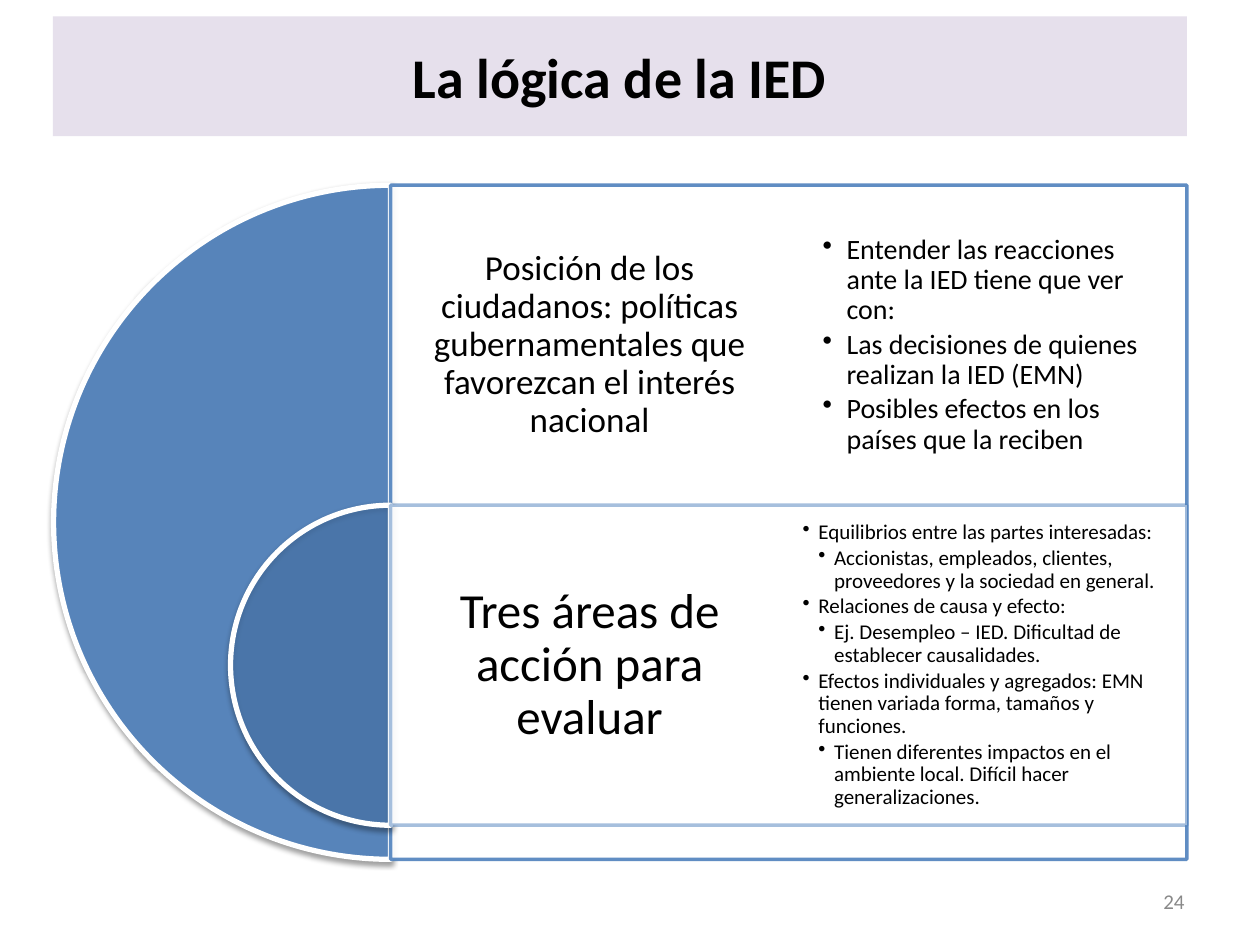
from lxml import etree
from pptx import Presentation
from pptx.dml.color import RGBColor
from pptx.enum.shapes import MSO_SHAPE
from pptx.enum.text import MSO_ANCHOR, PP_ALIGN
from pptx.oxml.ns import qn
from pptx.util import Inches, Pt

PIE, RECT = MSO_SHAPE.PIE, MSO_SHAPE.RECTANGLE
MIDDLE = MSO_ANCHOR.MIDDLE
LEFT, CENTER, RIGHT = PP_ALIGN.LEFT, PP_ALIGN.CENTER, PP_ALIGN.RIGHT

BLUE = RGBColor(0x4F, 0x81, 0xBD)
WHITE = RGBColor(0xFF, 0xFF, 0xFF)
BLACK = RGBColor(0, 0, 0)
GRAY = RGBColor(0x89, 0x89, 0x89)
LILAC = RGBColor(0xE6, 0xE0, 0xEC)

EDGE = 3.1       # left side of both panels, and centre of both pies
WIDTH = 6.32
HALF = WIDTH / 2
TOP = 1.47
BIG, SMALL = 5.35, 2.54
LOW = TOP + SMALL

CAUSES = [
    (0, "Entender las reacciones ante la IED tiene que ver con:"),
    (0, "Las decisiones de quienes realizan la IED (EMN)"),
    (0, "Posibles efectos en los países que la reciben"),
]
AREAS = [
    (0, "Equilibrios entre las partes interesadas:"),
    (1, "Accionistas, empleados, clientes, proveedores y la sociedad en general."),
    (0, "Relaciones de causa y efecto:"),
    (1, "Ej. Desempleo – IED. Dificultad de establecer causalidades."),
    (0, "Efectos individuales y agregados: EMN tienen variada forma, tamaños y funciones."),
    (1, "Tienen diferentes impactos en el ambiente local. Difícil hacer generalizaciones."),
]


def set_alpha(fill_owner, percent):
    """Make the solid fill found directly in an XML element translucent."""
    color = fill_owner.find(qn("a:solidFill"))[0]
    etree.SubElement(color, qn("a:alpha"), val=str(percent * 1000))


def add_shadow(shape):
    effects = shape._element.spPr.find(qn("a:effectLst"))
    outer = etree.SubElement(effects, qn("a:outerShdw"), blurRad="40000",
                             dist="20000", dir="5400000", rotWithShape="0")
    color = etree.SubElement(outer, qn("a:srgbClr"), val=str(BLACK))
    etree.SubElement(color, qn("a:alpha"), val="38000")


def add_solid(slide, kind, box, fill, line=None, weight=0):
    shape = slide.shapes.add_shape(kind, *map(Inches, box))
    shape.shadow.inherit = False
    shape.fill.solid()
    shape.fill.fore_color.rgb = fill
    if line is None:
        shape.line.fill.background()
    else:
        shape.line.color.rgb = line
        shape.line.width = Pt(weight)
    return shape


def add_pie(slide, top, size, alpha):
    """Draw the left half of a disc centred on the panels' edge."""
    pie = add_solid(slide, PIE, (EDGE - size / 2, top, size, size), BLUE, WHITE, 3)
    pie.adjustments[0] = 54
    pie.adjustments[1] = 162
    set_alpha(pie._element.spPr, alpha)
    add_shadow(pie)


def add_panel(slide, top, height, alpha):
    panel = add_solid(slide, RECT, (EDGE, top, WIDTH, height), WHITE, BLUE, 2)
    set_alpha(panel._element.spPr, 90)
    set_alpha(panel.line._ln, alpha)


def set_frame(frame, side, end):
    frame.word_wrap = True
    frame.vertical_anchor = MIDDLE
    frame.margin_left = frame.margin_right = Inches(side)
    frame.margin_top = frame.margin_bottom = Inches(end)


def add_run(para, text, size, color=BLACK, bold=False):
    run = para.add_run()
    run.text = text
    font = run.font
    font.name, font.size, font.bold = "Calibri", Pt(size), bold
    font.color.rgb = color


def add_box(slide, box, inset):
    frame = slide.shapes.add_textbox(*map(Inches, box)).text_frame
    set_frame(frame, inset, inset)
    return frame


def add_head(slide, top, text, size, inset):
    para = add_box(slide, (EDGE, top, HALF, SMALL), inset).paragraphs[0]
    para.alignment = CENTER
    para.line_spacing = 0.9
    para.space_after = Pt(size * 0.35)
    add_run(para, text, size)


def add_list(slide, box, items, size, hang):
    frame = add_box(slide, box, 0.27)
    for i, (level, text) in enumerate(items):
        para = frame.add_paragraph() if i else frame.paragraphs[0]
        para.alignment = LEFT
        para.level = level + 1
        para.line_spacing = 0.9
        para.space_after = Pt(size * 0.15)
        props = para._p.get_or_add_pPr()
        props.set("marL", str(Inches(hang * (level + 1))))
        props.set("indent", str(-Inches(hang)))
        etree.SubElement(props, qn("a:buChar"), char="•")
        add_run(para, text, size)


def add_title(slide, text):
    bar = add_solid(slide, RECT, (0.42, 0.13, 9, 0.95), LILAC)
    set_frame(bar.text_frame, 0.1, 0.05)
    para = bar.text_frame.paragraphs[0]
    para.alignment = CENTER
    add_run(para, text, 32, bold=True)


def add_number(slide, text):
    frame = add_box(slide, (7.17, 6.95, 2.33, 0.4), 0.1)
    set_frame(frame, 0.1, 0.05)
    para = frame.paragraphs[0]
    para.alignment = RIGHT
    add_run(para, text, 12, GRAY)


def main():
    deck = Presentation()
    deck.slide_width, deck.slide_height = Inches(10), Inches(7.5)
    slide = deck.slides.add_slide(deck.slide_layouts[6])

    add_pie(slide, TOP, BIG, 90)
    add_panel(slide, TOP, BIG, 90)
    add_head(slide, TOP, "Posición de los ciudadanos: políticas gubernamentales "
             "que favorezcan el interés nacional", 20, 0.08)
    add_pie(slide, LOW, SMALL, 50)
    add_panel(slide, LOW, SMALL, 50)
    add_head(slide, LOW, "Tres áreas de acción para evaluar", 28, 0.12)
    add_list(slide, (EDGE + HALF, TOP, HALF, SMALL), CAUSES, 16, 0.19)
    add_list(slide, (6.1, LOW, 3.48, SMALL), AREAS, 12, 0.125)
    add_number(slide, "24")
    add_title(slide, "La lógica de la IED")
    deck.save("out.pptx")


if __name__ == "__main__":
    main()
